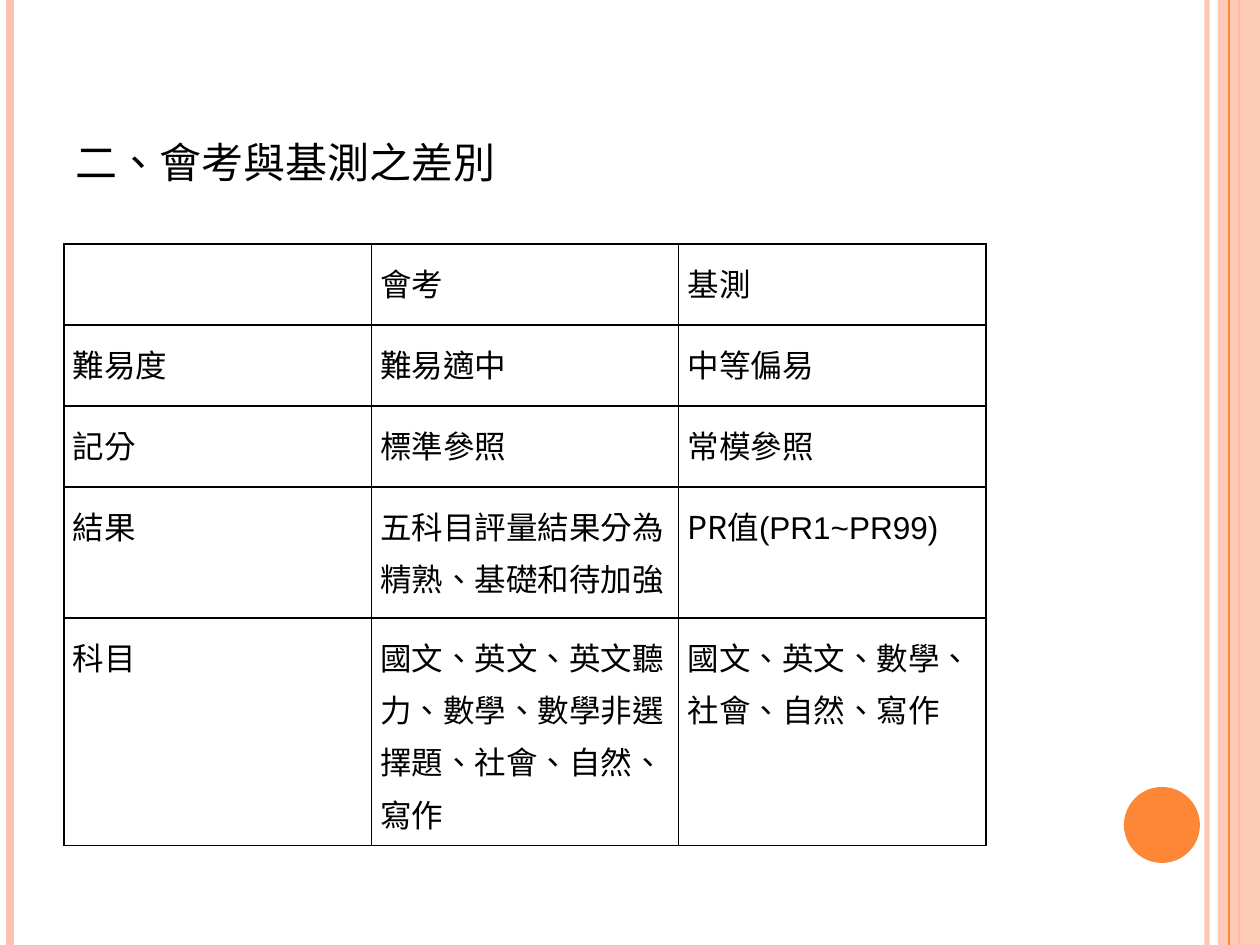
from dataclasses import dataclass

from lxml.etree import SubElement
from pptx import Presentation
from pptx.dml.color import RGBColor
from pptx.enum.shapes import MSO_CONNECTOR as Connector, MSO_SHAPE as Shape
from pptx.enum.text import MSO_ANCHOR as Anchor, PP_ALIGN as Align
from pptx.oxml import parse_xml
from pptx.oxml.ns import nsdecls, qn
from pptx.util import Pt

PX_PER_INCH = 126


@dataclass(frozen=True)
class Theme:
    ink: str = "000000"
    accent: str = "FE8637"
    tint: str = "FEC3AE"
    title_font: str = "TeX Gyre Schola"
    body_font: str = "Arial"
    cjk_font: str = "Noto Sans CJK SC"
    title_size: int = 30
    body_size: int = 18
    border: int = 1


THEME = Theme()

COMPARISON = [
    ["", "會考", "基測"],
    ["難易度", "難易適中", "中等偏易"],
    ["記分", "標準參照", "常模參照"],
    ["結果", "五科目評量結果分為精熟、基礎和待加強", ("PR", "值(PR1~PR99)")],
    ["科目", "國文、英文、英文聽力、數學、數學非選擇題、社會、自然、寫作",
     "國文、英文、數學、社會、自然、寫作"],
]
ROW_HEIGHTS = [81, 81, 81, 131, 181]


def px(length):
    return round(length * 914400 / PX_PER_INCH)


def px_box(*lengths):
    return [px(length) for length in lengths]


def paint(fill, color, opacity=100):
    fill.solid()
    fill.fore_color.rgb = RGBColor.from_string(color)
    if opacity < 100:
        srgb = fill._xPr.find(qn("a:solidFill"))[0]
        SubElement(srgb, qn("a:alpha")).set("val", str(opacity * 1000))


def format_run(run, size, latin):
    run.font.size = Pt(size)
    run.font.color.rgb = RGBColor.from_string(THEME.ink)
    run.font.name = latin
    props = run._r.get_or_add_rPr()
    props.set("lang", "zh-TW")
    SubElement(props, qn("a:ea")).set("typeface", THEME.cjk_font)


def add_stripe(slide, x, height, color, width, opacity=100):
    stripe = slide.shapes.add_connector(
        Connector.STRAIGHT, *px_box(x, 0, x, height))
    stripe.line.width = Pt(width)
    paint(stripe.line.fill, color, opacity)
    SubElement(stripe._element.spPr, qn("a:effectLst"))


def add_block(slide, kind, box, color, opacity=100):
    block = slide.shapes.add_shape(kind, *px_box(*box))
    block.shadow.inherit = False
    block.line.fill.background()
    paint(block.fill, color, opacity)


def add_frame(slide, width, height):
    """Vertical stripes on both edges, the right band and the corner disc."""
    add_stripe(slide, width - 53, height, THEME.tint, 3, 93)
    add_stripe(slide, 10, height, THEME.tint, 4.5)
    add_stripe(slide, width - 21, height, THEME.accent, 1.5)
    add_block(slide, Shape.RECTANGLE, (width - 42, 0, 42, height), THEME.tint, 87)
    add_stripe(slide, width - 31, height, THEME.accent, 0.75)
    add_block(slide, Shape.OVAL, (width - 136, height - 158, 76, 76), THEME.accent)


def add_title(slide, box, wording):
    title = slide.shapes.title
    title.left, title.top, title.width, title.height = px_box(*box)
    title.text_frame.text = wording
    title.text_frame.vertical_anchor = Anchor.BOTTOM
    heading = title.text_frame.paragraphs[0]
    heading.alignment = Align.LEFT
    format_run(heading.runs[0], THEME.title_size, THEME.title_font)
    heading.runs[0]._r.get_or_add_rPr().set("cap", "small")


def add_borders(cell):
    props = cell._tc.get_or_add_tcPr()
    for position, side in enumerate(("lnL", "lnR", "lnT", "lnB")):
        props.insert(position, parse_xml(
            f'<a:{side} {nsdecls("a")} w="{Pt(THEME.border)}"><a:solidFill>'
            f'<a:srgbClr val="{THEME.ink}"/></a:solidFill></a:{side}>'))


def fill_cell(cell, content):
    """A pair as content is a lead in the CJK font and the rest in the body font."""
    lead, rest = content if isinstance(content, tuple) else ("", content)
    cell.fill.background()
    add_borders(cell)
    cell.margin_left = cell.margin_right = px(9)
    cell.margin_top = cell.margin_bottom = px(9)
    entry = cell.text_frame.paragraphs[0]
    entry.line_spacing = 1.15
    for wording, latin in ((lead, THEME.cjk_font), (rest, THEME.body_font)):
        if wording:
            run = entry.add_run()
            run.text = wording
            format_run(run, THEME.body_size, latin)


def add_comparison(slide, box, rows, heights):
    table = slide.shapes.add_table(len(rows), len(rows[0]), *px_box(*box)).table
    table.first_row = table.horz_banding = False
    for column in table.columns:
        column.width = px(box[2] / len(rows[0]))
    for table_row, height, contents in zip(table.rows, heights, rows):
        table_row.height = px(height)
        for cell, content in zip(table_row.cells, contents):
            fill_cell(cell, content)


def main():
    width, height = 1260, 945
    deck = Presentation()
    deck.slide_width, deck.slide_height = px(width), px(height)
    slide = deck.slides.add_slide(deck.slide_layouts[5])
    add_frame(slide, width, height)
    add_title(slide, (63, 38, 1029, 157), "二、會考與基測之差別")
    add_comparison(slide, (64, 244, 922, sum(ROW_HEIGHTS)), COMPARISON, ROW_HEIGHTS)
    deck.save("out.pptx")


if __name__ == "__main__":
    main()
